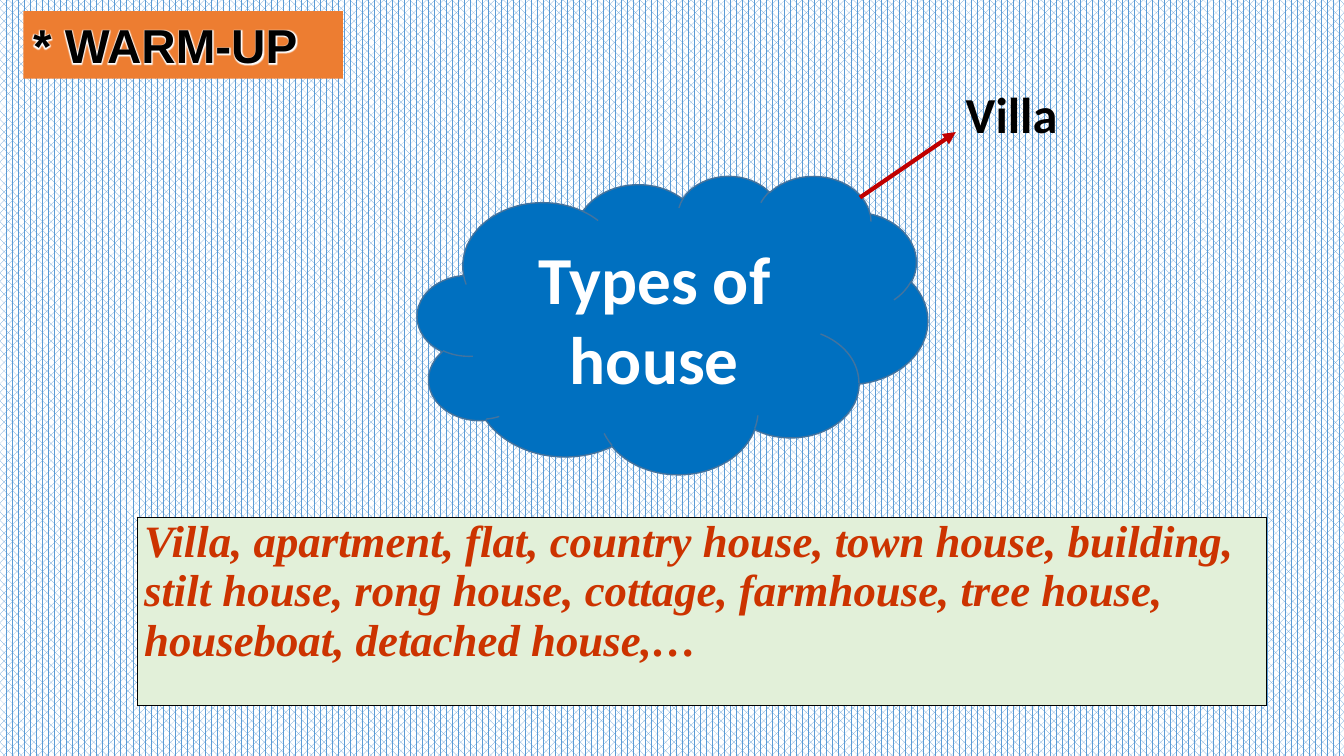
import pptx
import pptx.util
import pptx.dml.color
import pptx.enum.dml
import pptx.enum.shapes
import pptx.enum.text
import pptx.oxml
import pptx.oxml.ns

DRAWING = pptx.oxml.ns.nsdecls("a")
ALIGN = pptx.enum.text.PP_ALIGN
ANCHOR = pptx.enum.text.MSO_ANCHOR
SHAPE = pptx.enum.shapes.MSO_SHAPE


def color(value):
    return pptx.dml.color.RGBColor.from_string(value)


def write(frame, text, font, size, ink, italic=False, align=ALIGN.LEFT):
    frame.word_wrap = True
    para = frame.paragraphs[0]
    para.alignment = align
    span = para.add_run()
    span.text = text
    span.font.name = font
    span.font.size = pptx.util.Pt(size)
    span.font.bold = True
    span.font.italic = italic
    span.font.color.rgb = color(ink)
    return span


deck = pptx.Presentation()
deck.slide_width = pptx.util.Inches(13.33)
deck.slide_height = pptx.util.Inches(7.5)
column = deck.slide_width / 100
row = deck.slide_height / 100
page = deck.slides.add_slide(deck.slide_layouts[6])

backdrop = page.background.fill
backdrop.patterned()
backdrop.pattern = pptx.enum.dml.MSO_PATTERN.PERCENT_60
backdrop.fore_color.rgb = color("5B9BD5")
backdrop.back_color.rgb = color("FFFFFF")

banner = page.shapes.add_shape(
    SHAPE.RECTANGLE, int(1.73 * column), int(1.47 * row), int(23.78 * column), int(8.93 * row))
banner.shadow.inherit = False
banner.fill.solid()
banner.fill.fore_color.rgb = color("ED7D31")
banner.line.fill.background()
heading = write(banner.text_frame, "* WARM-UP", "Arial", 34, "000000")
glow = pptx.oxml.parse_xml(
    f'<a:effectLst {DRAWING}><a:glow rad="38100"><a:srgbClr val="FFFFFF"/></a:glow></a:effectLst>')
heading.font._element.find(pptx.oxml.ns.qn("a:solidFill")).addnext(glow)

cloud = page.shapes.add_shape(
    SHAPE.CLOUD, int(31.06 * column), int(23.2 * row), int(37.96 * column), int(39.47 * row))
cloud.shadow.inherit = False
cloud.fill.solid()
cloud.fill.fore_color.rgb = color("0070C0")
cloud.line.color.rgb = color("43739E")
cloud.line.width = pptx.util.Pt(1)
cloud.text_frame.vertical_anchor = ANCHOR.MIDDLE
write(cloud.text_frame, "Types of house", "Calibri", 48, "FFFFFF", align=ALIGN.CENTER)

arrow = page.shapes.add_connector(
    pptx.enum.shapes.MSO_CONNECTOR.STRAIGHT,
    int(63.99 * column), int(26.13 * row), int(71.12 * column), int(17.47 * row))
arrow.line.color.rgb = color("C00000")
arrow.line.width = pptx.util.Pt(3)
arrow.line._get_or_add_ln().append(
    pptx.oxml.parse_xml(f'<a:tailEnd {DRAWING} type="triangle"/>'))
arrow._element.spPr.append(pptx.oxml.parse_xml(f"<a:effectLst {DRAWING}/>"))

example = page.shapes.add_textbox(
    int(71.12 * column), int(10.4 * row), int(13.05 * column), int(9.47 * row))
write(example.text_frame, "Villa", "Calibri", 36, "000000")

answers = page.shapes.add_table(
    1, 1, int(10.2 * column), int(68.4 * row), int(84.02 * column), int(24.93 * row)).table
answers.first_row = False
answers.horz_banding = False
cell = answers.cell(0, 0)
cell.margin_left = cell.margin_right = pptx.util.Inches(0.07)
cell.margin_top = cell.margin_bottom = 0
write(
    cell.text_frame,
    "Villa, apartment, flat, country house, town house, building, stilt house, rong house, "
    "cottage, farmhouse, tree house, houseboat, detached house,…",
    "Times New Roman", 32, "CC3300", italic=True)
for side in ("lnL", "lnR", "lnT", "lnB"):
    cell._tc.get_or_add_tcPr().append(pptx.oxml.parse_xml(
        f'<a:{side} {DRAWING} w="12700"><a:solidFill><a:srgbClr val="000000"/></a:solidFill></a:{side}>'))
cell.fill.solid()
cell.fill.fore_color.rgb = color("E2F0D9")

deck.save("out.pptx")
